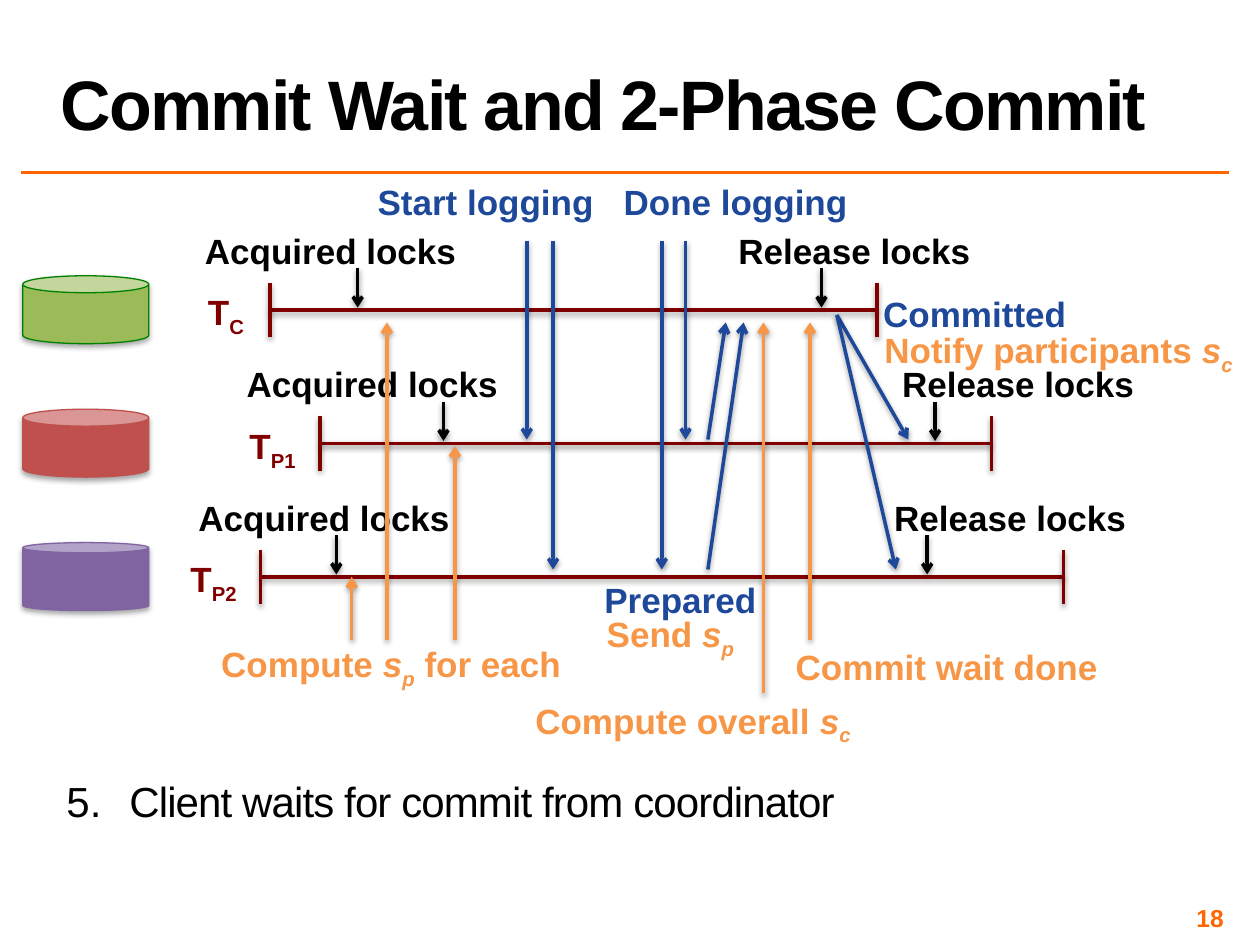
from lxml import etree
from pptx import Presentation
from pptx.dml.color import RGBColor
from pptx.enum import shapes, text
from pptx.oxml import ns
from pptx.util import Cm, Pt

BLACK = RGBColor(0x00, 0x00, 0x00)
MAROON = RGBColor(0x80, 0x00, 0x00)
BLUE = RGBColor(0x1E, 0x48, 0x99)
ORANGE = RGBColor(0xF7, 0x96, 0x46)
ACCENT = RGBColor(0xFF, 0x66, 0x00)
GREEN = RGBColor(0x9B, 0xBB, 0x59)
EDGE = RGBColor(0x00, 0x80, 0x00)
RED = RGBColor(0xC0, 0x50, 0x4D)
PURPLE = RGBColor(0x80, 0x64, 0xA2)

PITCH = 2.69
TALL = 1.12
ITALIC, SUB, LOW = "italic", "sub", "italic sub"


def child(node, tag, **attrs):
    return etree.SubElement(node, ns.qn(tag), attrs)


def shade(props, alpha=38, drop=20000):
    """Add a soft shadow straight below a shape."""
    node = props.find(ns.qn("a:effectLst"))
    if node is None:
        node = child(props, "a:effectLst")
    cast = child(node, "a:outerShdw", blurRad="40000", dist=str(drop),
                 dir="5400000", rotWithShape="0")
    tint = child(cast, "a:srgbClr", val="000000")
    child(tint, "a:alpha", val=str(alpha * 1000))


def write(frame, parts, size=20, color=BLACK, bold=True, align="LEFT",
          anchor="TOP", wrap=True, inset=None, track=0):
    """Fill a text frame from (text, style) pairs or one plain string."""
    frame.word_wrap = wrap
    frame.auto_size = text.MSO_AUTO_SIZE.NONE
    frame.vertical_anchor = text.MSO_ANCHOR[anchor]
    if inset is not None:
        frame.margin_left = frame.margin_right = Cm(inset)
        frame.margin_top = frame.margin_bottom = Cm(inset)
    para = frame.paragraphs[0]
    para.alignment = text.PP_ALIGN[align]
    for words, style in [(parts, "")] if isinstance(parts, str) else parts:
        run = para.add_run()
        run.text = words
        font = run.font
        font.name, font.size, font.bold = "Arial", Pt(size), bold
        font.color.rgb = color
        font.italic = ITALIC in style
        props = run._r.get_or_add_rPr()
        if SUB in style:
            props.set("baseline", "-25000")
        if track:
            props.set("spc", str(int(track * 100)))
    return para


def label(slide, parts, x, y, w, h=TALL, **form):
    box = slide.shapes.add_textbox(Cm(x), Cm(y), Cm(w), Cm(h))
    return write(box.text_frame, parts, **form)


def tag(slide, parts, x, y, w, color=BLACK):
    label(slide, parts, x, y, w, color=color, align="CENTER", wrap=False)


def line(pool, x1, y1, x2, y2, color, head=False, shadow=True):
    link = pool.add_connector(shapes.MSO_CONNECTOR.STRAIGHT,
                              Cm(x1), Cm(y1), Cm(x2), Cm(y2))
    link.line.color.rgb = color
    link.line.width = Pt(2)
    props = link._element.spPr
    if head:
        child(props.find(ns.qn("a:ln")), "a:tailEnd", type="arrow")
    if shadow:
        shade(props)
    else:
        child(props, "a:effectLst")


def heading(slide, x, y, w, h):
    title = slide.shapes.title
    title.left, title.top, title.width, title.height = map(Cm, (x, y, w, h))
    para = write(title.text_frame, "Commit Wait and 2-Phase Commit",
                 size=40, anchor="BOTTOM", track=-1)
    para.line_spacing = 0.8
    base = y + h + 0.46
    line(slide.shapes, x - 0.54, base, x + w, base, ACCENT, shadow=False)


def store(slide, x, y, fill, edge, rim):
    can = slide.shapes.add_shape(shapes.MSO_SHAPE.CAN,
                                 Cm(x), Cm(y), Cm(2.54), Cm(1.37))
    can.adjustments[0] = rim
    can.fill.solid()
    can.fill.fore_color.rgb = fill
    can.line.color.rgb = edge
    can.line.width = Pt(0.75)
    can.shadow.inherit = False
    shade(can._element.spPr, alpha=35, drop=23000)


def track(slide, y, name, start, end, mark, locks):
    """Draw one server's time span, with its name and lock events."""
    pool = slide.shapes.add_group_shape().shapes
    line(pool, start, y, end, y, MAROON)
    for x in (start, end):
        line(pool, x, y - 0.55, x, y + 0.55, MAROON)
    label(slide, [("T", ""), (name, SUB)], mark, y - 0.51, 1.55,
          color=MAROON, align="CENTER")
    events = (("Acquired locks", 5.61), ("Release locks", 5.23))
    for (words, w), (left, x) in zip(events, locks):
        tag(slide, words, left, y - 1.75, w)
        line(slide.shapes, x, y - 0.84, x, y - 0.05, BLACK, head=True)


def servers(slide, x, y):
    rows = [
        ("C", 5.44, 17.68, 3.78, [(3.86, 7.21), (14.61, 16.56)],
         GREEN, EDGE, 0.25),
        ("P1", 6.45, 19.99, 4.72, [(4.7, 8.94), (17.91, 18.85)],
         RED, RED, 0.25),
        ("P2", 5.25, 21.44, 3.53, [(3.73, 6.78), (17.75, 18.69)],
         PURPLE, PURPLE, 0.15),
    ]
    for i, (name, start, end, mark, locks, *look) in enumerate(rows):
        mid = y + i * PITCH
        store(slide, x, mid - 0.69, *look)
        track(slide, mid, name, start, end, mark, locks)


def flows(slide, y):
    """Draw the arrows between servers; y is the first time line."""
    top, low, last = y + 0.25, y + 2.61, y + 5.23
    sent, foot = y - 1.4, y + 6.65
    moves = {
        BLUE: [(10.62, sent, 10.62, low), (13.82, sent, 13.82, low),
               (11.15, sent, 11.15, last), (13.34, sent, 13.34, last),
               (14.27, low, 14.63, top), (14.27, last, 14.99, top),
               (16.87, y + 0.1, 18.31, low), (16.87, y + 0.1, 18.06, last)],
        ORANGE: [(7.09, foot, 7.09, y + 2 * PITCH), (7.8, foot, 7.8, top),
                 (9.17, foot, 9.17, y + PITCH + 0.05),
                 (16.33, foot, 16.33, top), (15.39, y + 7.72, 15.39, top)],
    }
    for color, ends in moves.items():
        for spot in ends:
            line(slide.shapes, *spot, color, head=True)


def steps(slide, y):
    """Name the protocol steps; y is the first time line."""
    notes = [
        ("Start logging", 7.34, -2.74, 4.9, BLUE),
        ("Done logging", 12.29, -2.74, 5.08, BLUE),
        ("Prepared", 11.91, 5.28, 3.61, BLUE),
        ("Committed", 17.53, -0.48, 4.24, BLUE),
        ([("Notify participants ", ""), ("s", ITALIC), ("c", LOW)],
         17.53, 0.25, 7.62, ORANGE),
        ([("Send ", ""), ("s", ITALIC), ("p", LOW)],
         11.94, 5.97, 3.15, ORANGE),
        ([("Compute ", ""), ("s", ITALIC), ("p", LOW), (" for each", "")],
         4.09, 6.58, 7.59, ORANGE),
        ("Commit wait done", 15.77, 6.63, 6.63, ORANGE),
        ([("Compute overall ", ""), ("s", ITALIC), ("c", LOW)],
         10.49, 7.72, 6.96, ORANGE),
    ]
    for parts, x, down, w, color in notes:
        tag(slide, parts, x, y + down, w, color)


def summary(slide, x, y, w, h):
    para = label(slide, "Client waits for commit from coordinator", x, y, w, h,
                 size=24, bold=False, inset=0.1, track=-0.5)
    para.space_before, para.space_after = Pt(16), Pt(8)
    props = para._p.get_or_add_pPr()
    props.set("marL", str(Cm(1.27)))
    props.set("indent", str(Cm(-1.27)))
    child(props, "a:buFont", typeface="Arial")
    child(props, "a:buAutoNum", type="arabicPeriod", startAt="5")


def main():
    deck = Presentation()
    deck.slide_width, deck.slide_height = Cm(25.4), Cm(19.05)
    slide = deck.slides.add_slide(deck.slide_layouts[5])
    heading(slide, 0.97, 0.05, 23.8, 2.97)
    servers(slide, 0.46, 6.25)
    flows(slide, 6.25)
    steps(slide, 6.25)
    summary(slide, 1.24, 15.54, 24.43, 2.87)
    label(slide, "18", 18.85, 18.21, 5.92, 0.58, size=14, color=ACCENT,
          align="RIGHT", anchor="MIDDLE", inset=0.1)
    deck.save("out.pptx")


if __name__ == "__main__":
    main()
